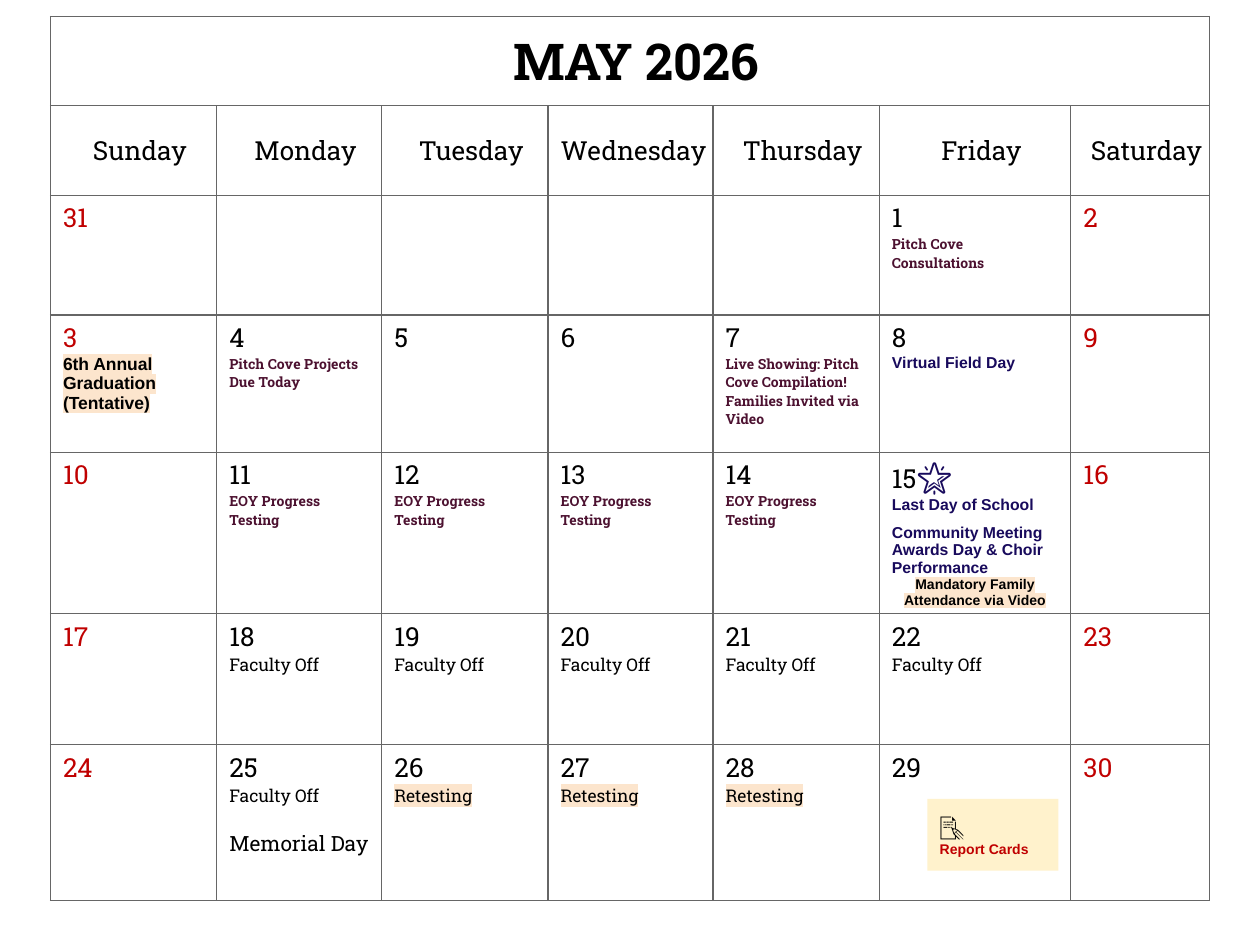
from dataclasses import dataclass
from typing import Optional

import pptx
import pptx.dml.color
import pptx.enum.shapes
import pptx.enum.text
import pptx.oxml
import pptx.oxml.ns
import pptx.util
from lxml import etree

Inches = pptx.util.Inches
Pt = pptx.util.Pt
qn = pptx.oxml.ns.qn
ALIGN = pptx.enum.text.PP_ALIGN

SLAB, SANS = "Roboto Slab", "Arial"
BLACK, RED, PLUM, NAVY = "000000", "C00000", "4C1130", "180A5C"
WHITE, GRID, PEACH, CREAM = "FFFFFF", "666666", "FCE5CD", "FFF2CC"


@dataclass(frozen=True)
class Style:
    size: float
    color: str = BLACK
    bold: bool = False
    font: str = SLAB
    highlight: Optional[str] = None


@dataclass(frozen=True)
class Line:
    text: str
    style: Style
    align: Optional[ALIGN] = None
    space_before: float = 0


TITLE = Style(29, bold=True)
WEEKDAY = Style(15)
WEEKEND = Style(15, RED)
PROJECT = Style(8, PLUM, True)
EVENT = Style(9, NAVY, True, SANS)
GRADUATION = Style(10, BLACK, True, SANS, PEACH)
FAMILY = Style(8, BLACK, True, SANS, PEACH)
STAR = Style(19.5, NAVY, True, SANS)
STAFF = Style(10)
RETEST = Style(10, highlight=PEACH)
HOLIDAY = Style(12)
MEMO_ICON = Style(14, font=SANS)
REPORT = Style(8, RED, True, SANS)

DAY_NAMES = ["Sunday", "Monday", "Tuesday", "Wednesday", "Thursday", "Friday", "Saturday"]
COL_WIDTHS = [1.32, 1.31, 1.32, 1.31, 1.32, 1.52, 1.1]
ROW_HEIGHTS = [0.71, 0.71, 0.95, 1.09, 1.28, 1.04, 1.24]
FIRST_WEEKDAY = 5
LAST_DAY = 15

NOTES = {
    1: [Line("Pitch Cove Consultations", PROJECT)],
    3: [Line("6th Annual", GRADUATION), Line("Graduation (Tentative)", GRADUATION)],
    4: [Line("Pitch Cove Projects Due Today", PROJECT)],
    7: [Line("Live Showing: Pitch Cove Compilation!", PROJECT),
        Line("Families Invited via Video", PROJECT)],
    8: [Line("Virtual Field Day", EVENT)],
    LAST_DAY: [Line("Last Day of School", EVENT),
               Line("Community Meeting", EVENT, space_before=6),
               Line("Awards Day & Choir Performance", EVENT),
               Line("Mandatory Family Attendance via Video", FAMILY, ALIGN.CENTER)],
}
NOTES |= {day: [Line("EOY Progress Testing", PROJECT)] for day in range(11, 15)}
NOTES |= {day: [Line("Faculty Off", STAFF)] for day in (*range(18, 23), 25)}
NOTES |= {day: [Line("Retesting", RETEST)] for day in range(26, 29)}
NOTES[25].append(Line("Memorial Day", HOLIDAY, space_before=13))


def rgb(color: str) -> pptx.dml.color.RGBColor:
    return pptx.dml.color.RGBColor.from_string(color)


def format_run(r, style: Style) -> None:
    r.font.size = Pt(style.size)
    r.font.bold = style.bold
    r.font.name = style.font
    r.font.color.rgb = rgb(style.color)
    if style.highlight:
        highlight = etree.Element(qn("a:highlight"))
        etree.SubElement(highlight, qn("a:srgbClr"), val=style.highlight)
        r.font.fill._xPr.find(qn("a:solidFill")).addnext(highlight)


def write_lines(tf, lines: list[Line]) -> None:
    tf.text = "\n".join(line.text for line in lines)
    for p, line in zip(tf.paragraphs, lines):
        p.alignment = line.align
        p.space_before = Pt(line.space_before)
        for r in p.runs:
            format_run(r, line.style)


def set_borders(cell) -> None:
    tc_pr = cell._tc.get_or_add_tcPr()
    for index, side in enumerate(("lnL", "lnR", "lnT", "lnB")):
        ln = etree.Element(qn(f"a:{side}"), w=str(Pt(0.75)))
        fill = etree.SubElement(ln, qn("a:solidFill"))
        etree.SubElement(fill, qn("a:srgbClr"), val=GRID)
        tc_pr.insert(index, ln)


def set_margins(box, left: float, top: float, right: float, bottom: float) -> None:
    box.margin_left, box.margin_top = Inches(left), Inches(top)
    box.margin_right, box.margin_bottom = Inches(right), Inches(bottom)


def add_grid(slide):
    frame = slide.shapes.add_table(
        len(ROW_HEIGHTS), len(COL_WIDTHS), Inches(0.4), Inches(0.13),
        Inches(sum(COL_WIDTHS)), Inches(sum(ROW_HEIGHTS)))
    table = frame.table
    table.first_row = table.horz_banding = False
    for column, width in zip(table.columns, COL_WIDTHS):
        column.width = Inches(width)
    for row, height in zip(table.rows, ROW_HEIGHTS):
        row.height = Inches(height)
    for cell in table.iter_cells():
        cell.fill.solid()
        cell.fill.fore_color.rgb = rgb(WHITE)
        set_margins(cell, 0.1, 0.04, 0.1, 0.04)
        set_borders(cell)
    return table


def fill_headings(table) -> None:
    title = table.cell(0, 0)
    title.merge(table.cell(0, len(COL_WIDTHS) - 1))
    set_margins(title, 0.1, 0.05, 0, 0.05)
    title.vertical_anchor = pptx.enum.text.MSO_ANCHOR.MIDDLE
    write_lines(title.text_frame, [Line("MAY 2026", TITLE, ALIGN.CENTER)])
    for col, name in enumerate(DAY_NAMES):
        cell = table.cell(1, col)
        set_margins(cell, 0.1, 0, 0, 0)
        cell.vertical_anchor = pptx.enum.text.MSO_ANCHOR.MIDDLE
        align = ALIGN.LEFT if name == "Wednesday" else ALIGN.CENTER
        write_lines(cell.text_frame, [Line(name, WEEKDAY, align)])


def fill_days(table) -> None:
    """Write days 1 to 31; the 31st wraps round to the first week."""
    for day in range(1, 32):
        week, col = divmod(day - 1 + FIRST_WEEKDAY, 7)
        tf = table.cell(2 + week % 5, col).text_frame
        style = WEEKEND if col in (0, 6) else WEEKDAY
        write_lines(tf, [Line(str(day), style), *NOTES.get(day, [])])
        if day == LAST_DAY:
            r = tf.paragraphs[0].add_run()
            r.text = "🌟"
            format_run(r, STAR)


def add_report_card(slide) -> None:
    sp = slide.shapes.add_shape(pptx.enum.shapes.MSO_SHAPE.RECTANGLE,
                                Inches(7.36), Inches(6.34), Inches(1.04), Inches(0.57))
    sp.shadow.inherit = False
    sp.fill.solid()
    sp.fill.fore_color.rgb = rgb(CREAM)
    sp.line.fill.background()
    tf = sp.text_frame
    tf.word_wrap = True
    tf.vertical_anchor = pptx.enum.text.MSO_ANCHOR.TOP
    set_margins(tf, 0.1, 0.1, 0.1, 0.1)
    write_lines(tf, [Line("📝", MEMO_ICON, ALIGN.LEFT),
                     Line("Report Cards", REPORT, ALIGN.LEFT)])


def main() -> None:
    prs = pptx.Presentation()
    prs.slide_width, prs.slide_height = Inches(10), Inches(7.5)
    slide = prs.slides.add_slide(prs.slide_layouts[6])
    table = add_grid(slide)
    fill_headings(table)
    fill_days(table)
    add_report_card(slide)
    prs.save("out.pptx")


if __name__ == "__main__":
    main()
